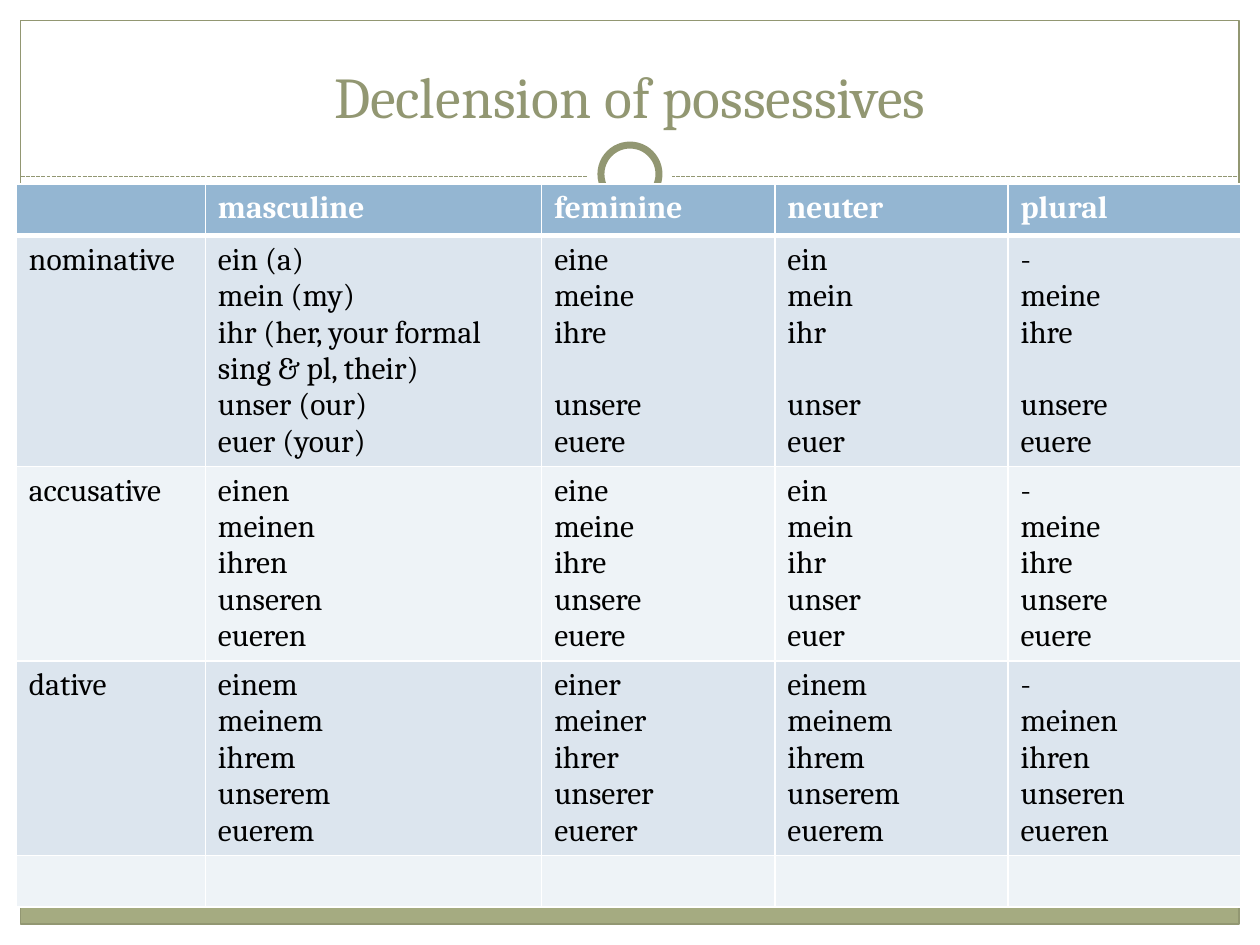
from lxml import etree
from pptx import Presentation
from pptx import util as u
from pptx.dml.color import RGBColor
from pptx.enum import dml, shapes, text
from pptx.oxml import ns

FACE = "Cambria"
SAGE = "929772"
WHITE = "FFFFFF"
HEADS = ["", "masculine", "feminine", "neuter", "plural"]
CASES = [
    ["nominative",
     "ein (a)|mein (my)|ihr (her, your formal sing & pl, their)|unser (our)|euer (your)",
     "eine|meine|ihre|unsere|euere",
     "ein|mein|ihr|unser|euer",
     "-|meine|ihre|unsere|euere"],
    ["accusative",
     "einen|meinen|ihren|unseren|eueren",
     "eine|meine|ihre|unsere|euere",
     "ein|mein|ihr|unser|euer",
     "-|meine|ihre|unsere|euere"],
    ["dative",
     "einem|meinem|ihrem|unserem|euerem",
     "einer|meiner|ihrer|unserer|euerer",
     "einem|meinem|ihrem|unserem|euerem",
     "-|meinen|ihren|unseren|eueren"],
    [""] * 5,
]


def paint(fmt, tone):
    """Give a fill or a font a solid hex colour."""
    if hasattr(fmt, "solid"):
        fmt.solid()
        fmt.fore_color.rgb = RGBColor.from_string(tone)
    else:
        fmt.color.rgb = RGBColor.from_string(tone)


def style(para, size, tone, bold=False):
    """Set the font of a whole paragraph."""
    para.font.name = FACE
    para.font.size = u.Pt(size)
    para.font.bold = bold
    paint(para.font, tone)


def block(slide, box, fill=None, line=None, width=0.75, kind="RECTANGLE"):
    """Add a plain shape in a box given in centimetres."""
    part = slide.shapes.add_shape(
        getattr(shapes.MSO_SHAPE, kind), *map(u.Cm, box))
    part.shadow.inherit = False
    if fill:
        paint(part.fill, fill)
    else:
        part.fill.background()
    if line:
        paint(part.line.fill, line)
        part.line.width = u.Pt(width)
    else:
        part.line.fill.background()


def ring(slide, x, y):
    """Draw the ring on its white disc, centred on a point."""
    for size, line in ((1.7, None), (1.17, SAGE)):
        box = (x - size / 2, y - size / 2, size, size)
        block(slide, box, WHITE, line, 4, "OVAL")


def frame(slide, wide, high, edge):
    """Draw the white margins, the footer bar, the outline and the divider."""
    top, rule = 3.86, 3.56
    for box in ((0, high - edge, wide, edge), (0, 0, wide, top),
                (0, 0, edge, high), (wide - edge, 0, edge, high)):
        block(slide, box, WHITE)
    inner = wide - 2 * edge
    block(slide, (edge, high - edge - 0.86, inner, 0.86), "A5AB81")
    block(slide, (edge, edge, inner, high - 2 * edge), line=SAGE)
    line = slide.shapes.add_connector(
        shapes.MSO_CONNECTOR.STRAIGHT,
        *map(u.Cm, (edge, rule, wide - edge, rule)))
    paint(line.line.fill, SAGE)
    line.line.width = u.Pt(0.75)
    line.line.dash_style = dml.MSO_LINE.SQUARE_DOT
    etree.SubElement(line.element.spPr, ns.qn("a:effectLst"))
    ring(slide, wide / 2, 3.51)


def head(slide, box, words):
    """Place the title in front of the frame."""
    title = slide.shapes.title
    title.element.getparent().append(title.element)
    title.left, title.top, title.width, title.height = map(u.Cm, box)
    title.text = words
    title.text_frame.vertical_anchor = text.MSO_ANCHOR.BOTTOM
    para = title.text_frame.paragraphs[0]
    para.alignment = text.PP_ALIGN.CENTER
    style(para, 33, SAGE)


def border(cell, base):
    """Draw white borders round a cell, with its own width at the base."""
    props = cell._tc.get_or_add_tcPr()
    for spot, (side, size) in enumerate(
            (("L", 1), ("R", 1), ("T", 1), ("B", base))):
        edge = etree.Element(ns.qn("a:ln" + side), w=str(u.Pt(size)))
        fill = etree.SubElement(edge, ns.qn("a:solidFill"))
        etree.SubElement(fill, ns.qn("a:srgbClr"), val=WHITE)
        props.insert(spot, edge)


def grid(slide, x, y, cols, high):
    """Build the table of endings, with rows that grow to fit their text."""
    rows = [HEADS] + CASES
    table = slide.shapes.add_table(
        len(rows), len(cols), u.Cm(x), u.Cm(y),
        u.Cm(sum(cols)), u.Cm(high * len(rows))).table
    for col, wide in zip(table.columns, cols):
        col.width = u.Cm(wide)
    for r, row in enumerate(rows):
        top = r == 0
        tone = "94B6D2" if top else ("EEF3F7", "DCE5EE")[r % 2]
        for c, words in enumerate(row):
            cell = table.cell(r, c)
            cell.text = words.replace("|", "\n")
            paint(cell.fill, tone)
            border(cell, 3 if top else 1)
            for n, para in enumerate(cell.text_frame.paragraphs):
                style(para, 18, WHITE if top else "000000", top)
                if r == 1 and c > 1 and n == 3:
                    para.space_before = u.Pt(20.8)


def main():
    """Build the slide and save it."""
    deck = Presentation()
    deck.slide_width, deck.slide_height = u.Cm(25.4), u.Cm(19.05)
    slide = deck.slides.add_slide(deck.slide_layouts[5])
    paint(slide.background.fill, "EBDDC3")
    frame(slide, 25.4, 19.05, 0.42)
    head(slide, (0.85, 0.64, 23.7, 2.1), "Declension of possessives")
    grid(slide, 0.33, 3.71, [3.81, 6.78, 4.7, 4.7, 4.7], 1.04)
    deck.save("out.pptx")


if __name__ == "__main__":
    main()
